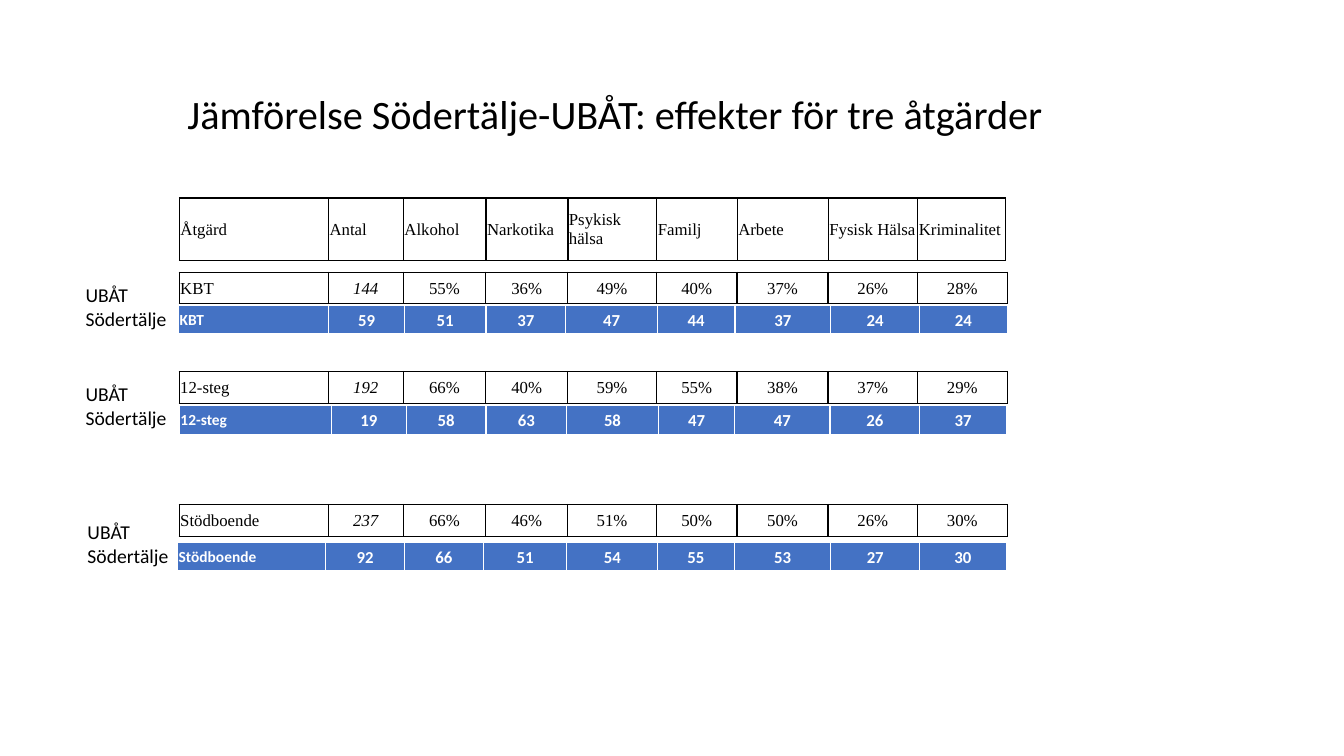
from dataclasses import dataclass

from lxml.etree import SubElement
from pptx import Presentation
from pptx.dml.color import RGBColor
from pptx.enum.text import MSO_ANCHOR as Anchor, MSO_AUTO_SIZE as AutoSize, PP_ALIGN as Align
from pptx.oxml.ns import qn
from pptx.slide import Slide
from pptx.table import _Cell as Cell
from pptx.text.text import _Paragraph as Paragraph
from pptx.util import Pt


@dataclass(frozen=True)
class Theme:
    black: str = "000000"
    white: str = "FFFFFF"
    blue: str = "4472C4"
    sans: str = "Calibri"
    serif: str = "Times New Roman"
    title_size: float = 28.8
    label_size: float = 14
    cell_size: float = 12
    measure_size: float = 11
    cell_inset: float = 0.72


@dataclass(frozen=True)
class RowStyle:
    font: str
    color: str
    fill: str | None
    first_size: float
    bold: bool
    italic_count: bool
    values_align: Align
    bottom_inset: float
    bottom_border: float
    last_border: float


@dataclass(frozen=True)
class TableRow:
    """A table of one row, with its place and column widths in points."""
    left: float
    top: float
    height: float
    columns: tuple[float, ...]
    texts: tuple[str, ...]
    style: RowStyle


@dataclass(frozen=True)
class Label:
    left: float
    top: float


THEME = Theme()
HEADER = RowStyle(THEME.serif, THEME.black, None, THEME.cell_size, False, False,
                  Align.LEFT, 0, 1, 0.5)
UBAT = RowStyle(THEME.serif, THEME.black, None, THEME.cell_size, False, True,
                Align.CENTER, 0, 1, 0.5)
SODERTALJE = RowStyle(THEME.sans, THEME.white, THEME.blue, THEME.measure_size, True, False,
                      Align.CENTER, THEME.cell_inset, 3, 1)

UBAT_COLUMNS = (106.5, 53.5, 59, 58.5, 63.5, 57.5, 65, 64, 64)
HEADER_COLUMNS = UBAT_COLUMNS[:-1] + (62.5,)

ROWS = (
    TableRow(128.2, 141.4, 44.6, HEADER_COLUMNS,
             ("Åtgärd", "Antal", "Alkohol", "Narkotika", "Psykisk hälsa", "Familj",
              "Arbete", "Fysisk Hälsa", "Kriminalitet"), HEADER),
    TableRow(128, 194.5, 22.3, UBAT_COLUMNS,
             ("KBT", "144", "55%", "36%", "49%", "40%", "37%", "26%", "28%"), UBAT),
    TableRow(127.6, 218.2, 21.3, (107.3, 54, 58.3, 57, 65.5, 55.4, 68.4, 63.4, 62.7),
             ("KBT", "59", "51", "37", "47", "44", "37", "24", "24"), SODERTALJE),
    TableRow(128, 265.3, 22.8, UBAT_COLUMNS,
             ("12-steg", "192", "66%", "40%", "59%", "55%", "38%", "37%", "29%"), UBAT),
    TableRow(128.2, 289.8, 21.3, (108.7, 53.3, 57, 57.6, 65.5, 54.7, 68, 64.1, 62),
             ("12-steg", "19", "58", "63", "58", "47", "47", "26", "37"), SODERTALJE),
    TableRow(128, 360.4, 22.8, UBAT_COLUMNS,
             ("Stödboende", "237", "66%", "46%", "51%", "50%", "50%", "26%", "30%"), UBAT),
    TableRow(126.9, 387.4, 21.3, (105.9, 56.2, 56.2, 59.8, 64.8, 54.7, 69.1, 63.4, 62),
             ("Stödboende", "92", "66", "51", "54", "55", "53", "27", "30"), SODERTALJE),
)
LABELS = (Label(54, 198.7), Label(54, 269.3), Label(55.4, 367.9))


def set_font(paragraph: Paragraph, name: str, size: float, color: str) -> None:
    paragraph.font.name = name
    paragraph.font.size = Pt(size)
    paragraph.font.color.rgb = RGBColor.from_string(color)


def set_borders(cell: Cell, color: str, widths: dict[str, float]) -> None:
    """Draw the sides, which the file format wants ahead of the cell fill."""
    properties = cell._tc.get_or_add_tcPr()
    for position, (side, width) in enumerate(widths.items()):
        line = SubElement(properties, qn(f"a:ln{side}"), w=str(Pt(width)))
        solid = SubElement(line, qn("a:solidFill"))
        SubElement(solid, qn("a:srgbClr"), val=color)
        properties.insert(position, line)


def format_cell(cell: Cell, text: str, column: int, is_last: bool, style: RowStyle) -> None:
    cell.text = text
    cell.vertical_anchor = Anchor.MIDDLE
    cell.margin_left = cell.margin_right = cell.margin_top = Pt(THEME.cell_inset)
    cell.margin_bottom = Pt(style.bottom_inset)
    if style.fill:
        cell.fill.solid()
        cell.fill.fore_color.rgb = RGBColor.from_string(style.fill)
    else:
        cell.fill.background()
    set_borders(cell, style.color, {"L": 1, "R": style.last_border if is_last else 1,
                                    "T": 1, "B": style.bottom_border})
    paragraph = cell.text_frame.paragraphs[0]
    paragraph.alignment = style.values_align if column else Align.LEFT
    set_font(paragraph, style.font, THEME.cell_size if column else style.first_size, style.color)
    paragraph.font.bold = style.bold
    paragraph.font.italic = style.italic_count and column == 1


def add_row(slide: Slide, row: TableRow) -> None:
    table = slide.shapes.add_table(1, len(row.columns), Pt(row.left), Pt(row.top),
                                   Pt(sum(row.columns)), Pt(row.height)).table
    table.first_row = table.horz_banding = False
    for column, (width, text) in enumerate(zip(row.columns, row.texts, strict=True)):
        table.columns[column].width = Pt(width)
        is_last = column == len(row.columns) - 1
        format_cell(table.cell(0, column), text, column, is_last, row.style)


def add_label(slide: Slide, label: Label) -> None:
    frame = slide.shapes.add_textbox(Pt(label.left), Pt(label.top), Pt(72.7), Pt(41)).text_frame
    frame.word_wrap = False
    frame.auto_size = AutoSize.SHAPE_TO_FIT_TEXT
    frame.text = "UBÅT\nSödertälje"
    for paragraph in frame.paragraphs:
        set_font(paragraph, THEME.sans, THEME.label_size, THEME.black)


def format_title(slide: Slide) -> None:
    title = slide.shapes.title
    title.left, title.top, title.width, title.height = Pt(126.7), Pt(66.2), Pt(633.6), Pt(34.6)
    frame = title.text_frame
    frame.text = "Jämförelse Södertälje-UBÅT: effekter för tre åtgärder"
    frame.auto_size = AutoSize.NONE
    frame.word_wrap = True
    frame.vertical_anchor = Anchor.MIDDLE
    heading = frame.paragraphs[0]
    heading.alignment = Align.LEFT
    heading.line_spacing = 0.9
    set_font(heading, THEME.sans, THEME.title_size, THEME.black)


def main() -> None:
    presentation = Presentation()
    presentation.slide_width, presentation.slide_height = Pt(960), Pt(540)
    slide = presentation.slides.add_slide(presentation.slide_layouts.get_by_name("Title Only"))
    format_title(slide)
    for row in ROWS:
        add_row(slide, row)
    for label in LABELS:
        add_label(slide, label)
    presentation.save("out.pptx")


if __name__ == "__main__":
    main()
